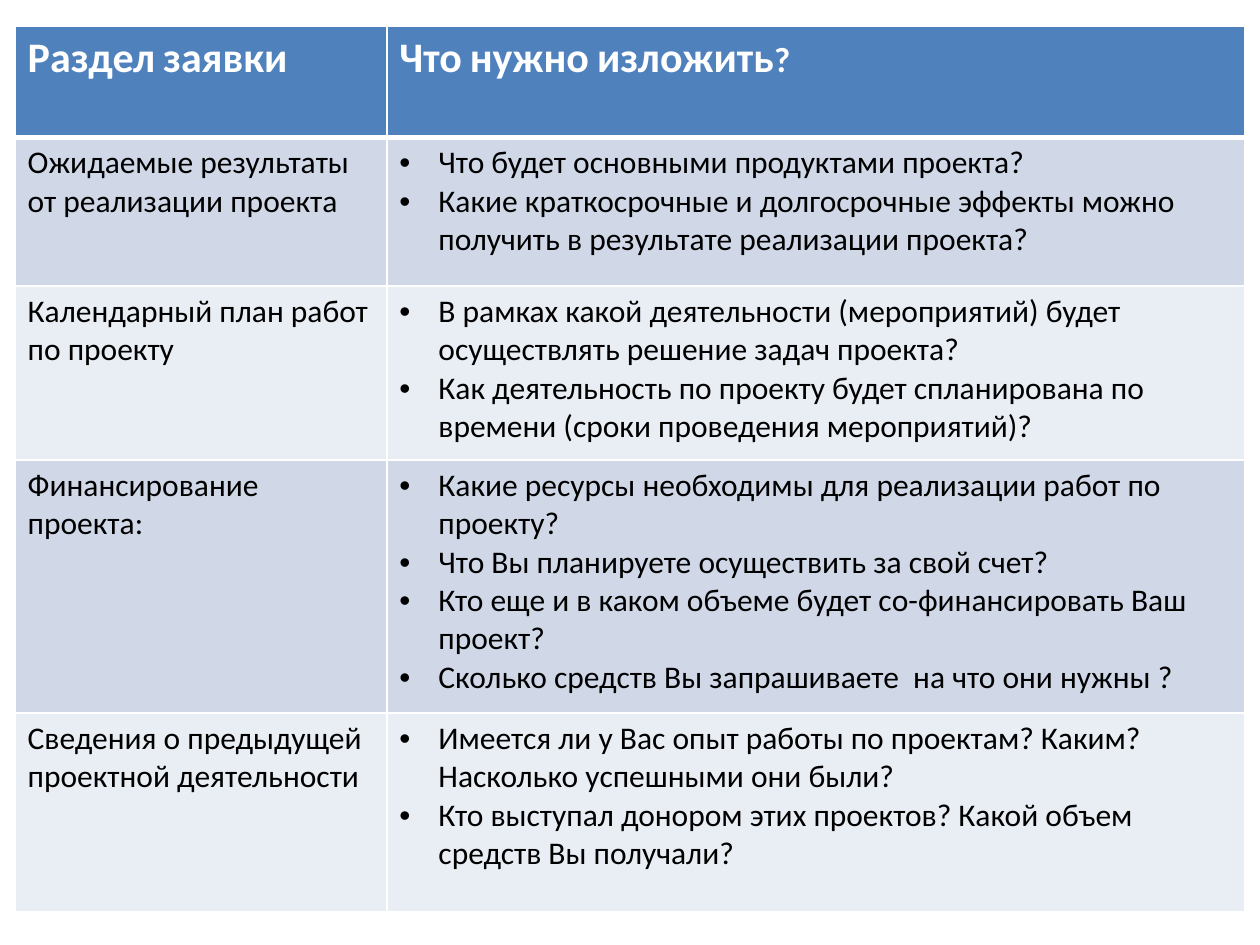
from lxml.etree import SubElement
from pptx import Presentation
from pptx.dml.color import RGBColor
from pptx.oxml.ns import qn
from pptx.util import Inches, Pt

WHITE = RGBColor(0xFF, 0xFF, 0xFF)
BLACK = RGBColor(0x00, 0x00, 0x00)
HEADER_BLUE = RGBColor(0x4F, 0x81, 0xBD)
BANDS = [RGBColor(0xD0, 0xD8, 0xE8), RGBColor(0xE9, 0xED, 0xF4)]

FONT = "Calibri"
BULLET_INDENT = Inches(0.31)
COLUMNS = [2.95, 6.81]
ROWS = [0.88, 1.18, 1.38, 2.01, 1.58]

# Header words are 24 pt; the spaces and the question mark are 20 pt
HEADERS = [
    [("Раздел", 24), (" ", 20), ("заявки", 24)],
    [("Что", 24), (" ", 20), ("нужно", 24), (" ", 20), ("изложить", 24), ("?", 20)],
]

SECTIONS = [
    ("Ожидаемые результаты от реализации проекта", [
        "Что будет основными продуктами проекта?",
        "Какие краткосрочные и долгосрочные эффекты можно получить "
        "в результате реализации проекта?",
    ]),
    ("Календарный план работ по проекту", [
        "В рамках какой деятельности (мероприятий) будет осуществлять "
        "решение задач проекта?",
        "Как деятельность по проекту будет спланирована по времени "
        "(сроки проведения мероприятий)?",
    ]),
    ("Финансирование проекта:", [
        "Какие ресурсы необходимы для реализации работ по проекту?",
        "Что Вы планируете осуществить за свой счет?",
        "Кто еще и в каком объеме будет со-финансировать Ваш проект?",
        "Сколько средств Вы запрашиваете  на что они нужны ?",
    ]),
    ("Сведения о предыдущей  проектной деятельности", [
        "Имеется ли у Вас опыт работы по проектам? Каким? "
        "Насколько успешными они были?",
        "Кто выступал донором этих проектов? Какой объем средств Вы получали?",
    ]),
]


def style_cell(cell, fill, top=1, bottom=1):
    """Give a cell white borders and a solid fill."""
    tc_pr = cell._tc.get_or_add_tcPr()
    for side, width in (("L", 1), ("R", 1), ("T", top), ("B", bottom)):
        ln = SubElement(tc_pr, qn(f"a:ln{side}"), w=str(Pt(width)))
        SubElement(SubElement(ln, qn("a:solidFill")), qn("a:srgbClr"), val=str(WHITE))
    cell.fill.solid()
    cell.fill.fore_color.rgb = fill


def set_font(p, color, bold=False):
    p.font.name = FONT
    p.font.size = Pt(18)
    p.font.bold = bold
    p.font.color.rgb = color


def add_bullet(p):
    p_pr = p._p.get_or_add_pPr()
    p_pr.set("marL", str(BULLET_INDENT))
    p_pr.set("indent", str(-BULLET_INDENT))
    SubElement(p_pr, qn("a:buFont"), typeface="Arial")
    SubElement(p_pr, qn("a:buChar"), char="•")


def fill_header(cell, runs):
    style_cell(cell, HEADER_BLUE, bottom=3)
    p = cell.text_frame.paragraphs[0]
    set_font(p, WHITE, bold=True)
    for text, size in runs:
        r = p.add_run()
        r.text = text
        r.font.size = Pt(size)


def fill_body(cell, lines, fill, top, bulleted):
    style_cell(cell, fill, top=top)
    tf = cell.text_frame
    for i, line in enumerate(lines):
        p = tf.add_paragraph() if i else tf.paragraphs[0]
        if bulleted:
            add_bullet(p)
        p.add_run().text = line
        set_font(p, BLACK)


def add_sections_table(s, left, top, width, height):
    """Table of application sections and the questions each one answers."""
    table = s.shapes.add_table(len(ROWS), len(COLUMNS), left, top, width, height).table
    for column, share in zip(table.columns, COLUMNS):
        column.width = int(width * share / sum(COLUMNS))
    for row, share in zip(table.rows, ROWS):
        row.height = int(height * share / sum(ROWS))

    # Header row
    for col, runs in enumerate(HEADERS):
        fill_header(table.cell(0, col), runs)

    # Banded section rows
    for row, (title, questions) in enumerate(SECTIONS, start=1):
        band = BANDS[(row - 1) % 2]
        top_border = 3 if row == 1 else 1
        fill_body(table.cell(row, 0), [title], band, top_border, bulleted=False)
        fill_body(table.cell(row, 1), questions, band, top_border, bulleted=True)


def main():
    prs = Presentation()
    prs.slide_width, prs.slide_height = Inches(10), Inches(7.5)
    s = prs.slides.add_slide(prs.slide_layouts[6])
    add_sections_table(s, Inches(0.12), Inches(0.21), Inches(9.76), Inches(7.03))
    prs.save("out.pptx")


if __name__ == "__main__":
    main()
